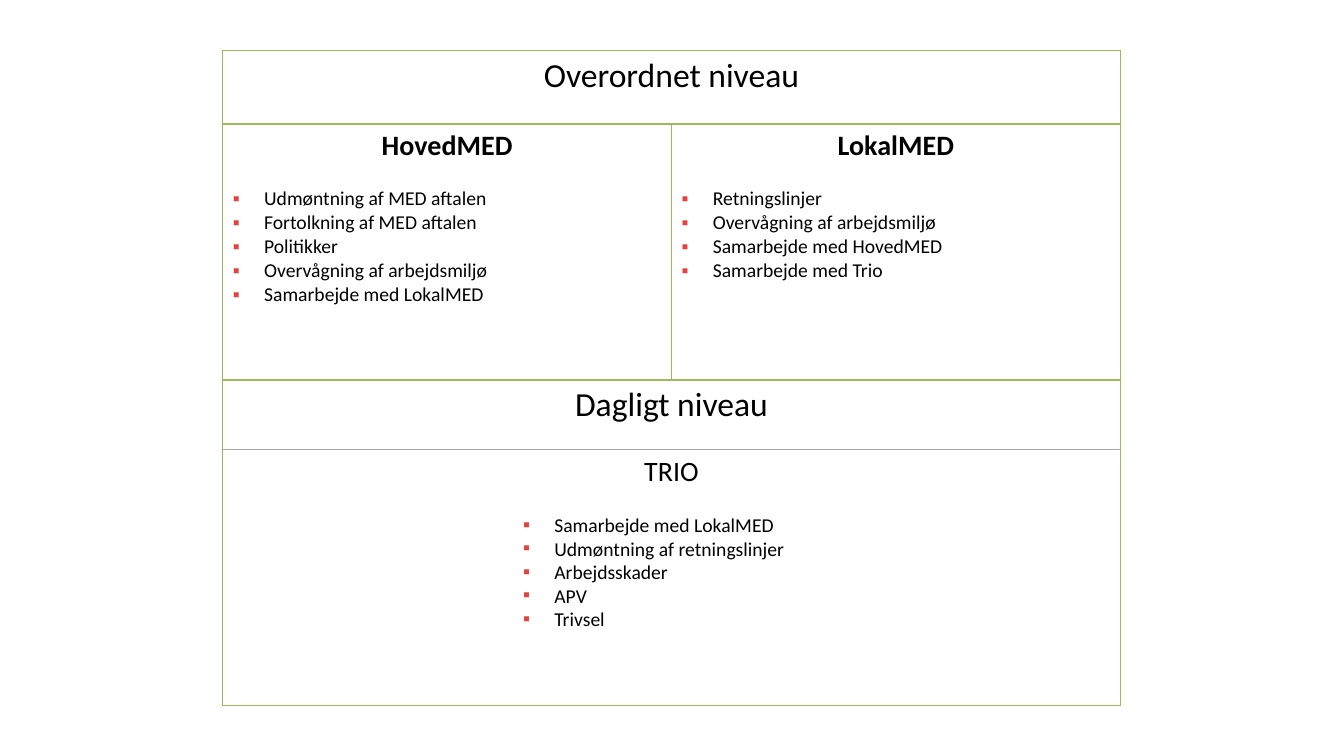
from lxml.etree import SubElement
from pptx import Presentation
from pptx.dml.color import RGBColor
from pptx.enum.text import MSO_AUTO_SIZE as AutoSize, PP_ALIGN as Align
from pptx.oxml.ns import qn
from pptx.util import Inches, Pt

FONT = "Calibri"
COLORS = {"text": "000000", "bullet": "E24444", "border": "9BBB59", "divider": "A6A6A6"}
WIDTH, HEIGHT = Inches(13.33), Inches(7.5)
INDENT = Inches(0.31)
BODY_SIZE = 14

COLUMN = Inches(4.45)
ROWS = [Inches(0.73), Inches(2.54), Inches(0.69), Inches(2.54)]

HOVED_TASKS = [
    "Udmøntning af MED aftalen",
    "Fortolkning af MED aftalen",
    "Politikker",
    "Overvågning af arbejdsmiljø",
    "Samarbejde med LokalMED",
]
LOKAL_TASKS = [
    "Retningslinjer",
    "Overvågning af arbejdsmiljø",
    "Samarbejde med HovedMED",
    "Samarbejde med Trio",
]
TRIO_TASKS = [
    "Samarbejde med LokalMED",
    "Udmøntning af retningslinjer",
    "Arbejdsskader",
    "APV",
    "Trivsel",
]


def add_run(paragraph, text, size, bold=False):
    run = paragraph.add_run()
    run.text = text
    run.font.name = FONT
    run.font.size = Pt(size)
    run.font.bold = bold
    run.font.color.rgb = RGBColor.from_string(COLORS["text"])


def add_heading(frame, text, size, bold=False):
    paragraph = frame.paragraphs[0]
    paragraph.alignment = Align.CENTER
    add_run(paragraph, text, size, bold)
    return paragraph


def add_bullet(paragraph, text, alignment):
    paragraph.alignment = alignment
    properties = paragraph._p.get_or_add_pPr()
    properties.set("marL", str(INDENT))
    properties.set("indent", str(-INDENT))
    color = SubElement(properties, qn("a:buClr"))
    SubElement(color, qn("a:srgbClr"), val=COLORS["bullet"])
    SubElement(properties, qn("a:buFont"), typeface=FONT)
    SubElement(properties, qn("a:buChar"), char="▪")
    add_run(paragraph, text, BODY_SIZE)


def set_borders(cell, **side_colors):
    properties = cell._tc.get_or_add_tcPr()
    for side in "LRTB":
        line = SubElement(properties, qn(f"a:ln{side}"), w=str(Pt(1)))
        fill = SubElement(line, qn("a:solidFill"))
        SubElement(fill, qn("a:srgbClr"), val=side_colors.get(side, COLORS["border"]))


def fill_committee(cell, name, tasks):
    heading = add_heading(cell.text_frame, name, 20, bold=True)
    heading.space_after = Pt(17)
    for task in tasks:
        add_bullet(cell.text_frame.add_paragraph(), task, Align.LEFT)


def add_level_table(slide):
    frame = slide.shapes.add_table(
        len(ROWS), 2, Inches(2.21), Inches(0.5), 2 * COLUMN, sum(ROWS))
    table = frame.table
    table.first_row = table.horz_banding = False
    for column in table.columns:
        column.width = COLUMN
    for row, height in zip(table.rows, ROWS):
        row.height = height

    # Green grid with a grey line above the trio row
    dividers = {2: {"B": COLORS["divider"]}, 3: {"T": COLORS["divider"]}}
    for row in range(len(ROWS)):
        for column in range(2):
            cell = table.cell(row, column)
            set_borders(cell, **dividers.get(row, {}))
            cell.fill.background()

    # Full-width headings
    headings = {0: ("Overordnet niveau", 24), 2: ("Dagligt niveau", 24), 3: ("TRIO", 20)}
    for row, (text, size) in headings.items():
        table.cell(row, 0).merge(table.cell(row, 1))
        add_heading(table.cell(row, 0).text_frame, text, size)

    # Committees side by side
    fill_committee(table.cell(1, 0), "HovedMED", HOVED_TASKS)
    fill_committee(table.cell(1, 1), "LokalMED", LOKAL_TASKS)


def add_task_box(slide, left, top, width, height, tasks):
    frame = slide.shapes.add_textbox(left, top, width, height).text_frame
    frame.word_wrap = True
    frame.auto_size = AutoSize.SHAPE_TO_FIT_TEXT
    for index, task in enumerate(tasks):
        paragraph = frame.add_paragraph() if index else frame.paragraphs[0]
        add_bullet(paragraph, task, Align.JUSTIFY)


def main():
    presentation = Presentation()
    presentation.slide_width, presentation.slide_height = WIDTH, HEIGHT
    slide = presentation.slides.add_slide(presentation.slide_layouts[6])
    add_level_table(slide)
    add_task_box(slide, Inches(5.09), Inches(5.04), Inches(6.47), Inches(1.58), TRIO_TASKS)
    presentation.save("out.pptx")


if __name__ == "__main__":
    main()
